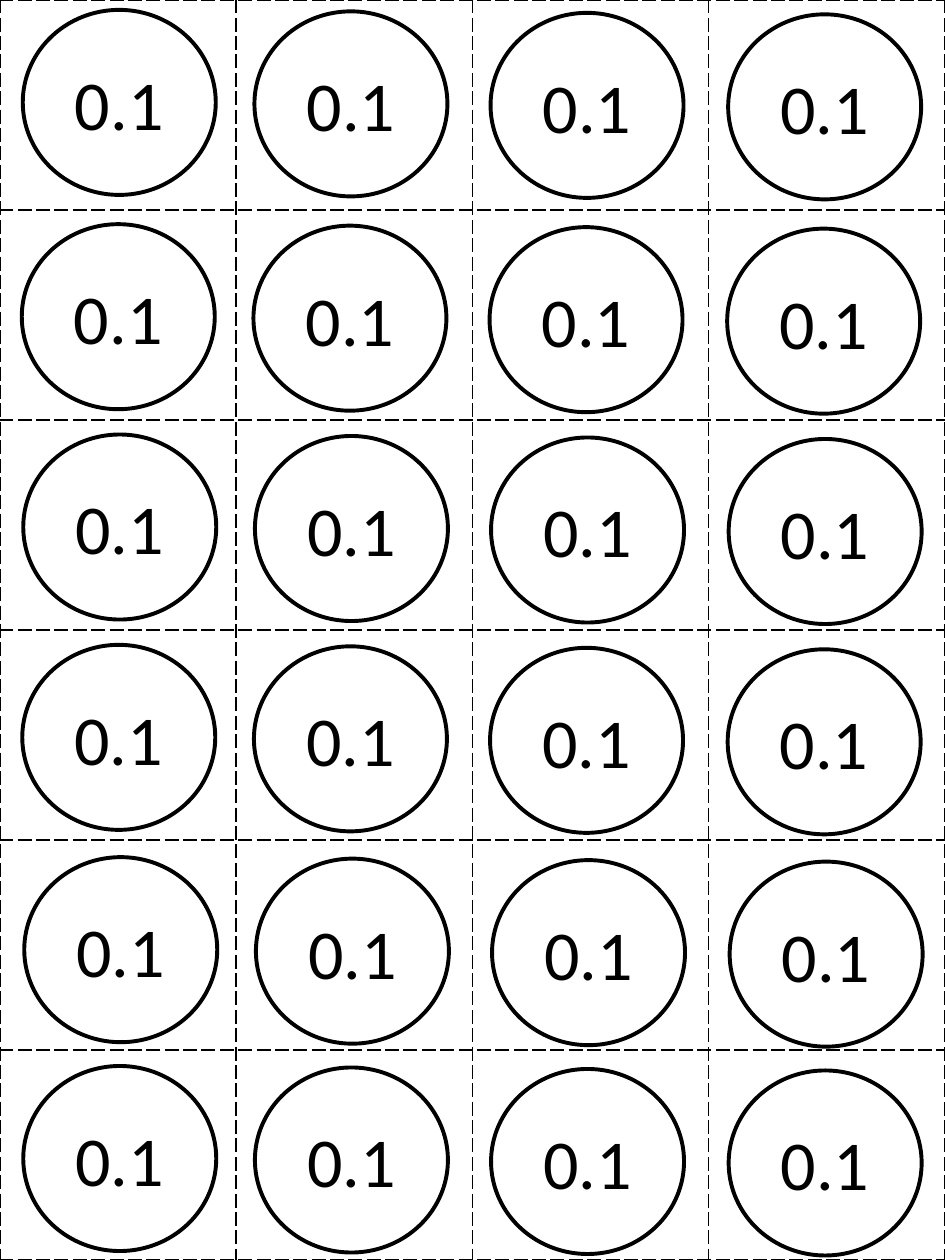
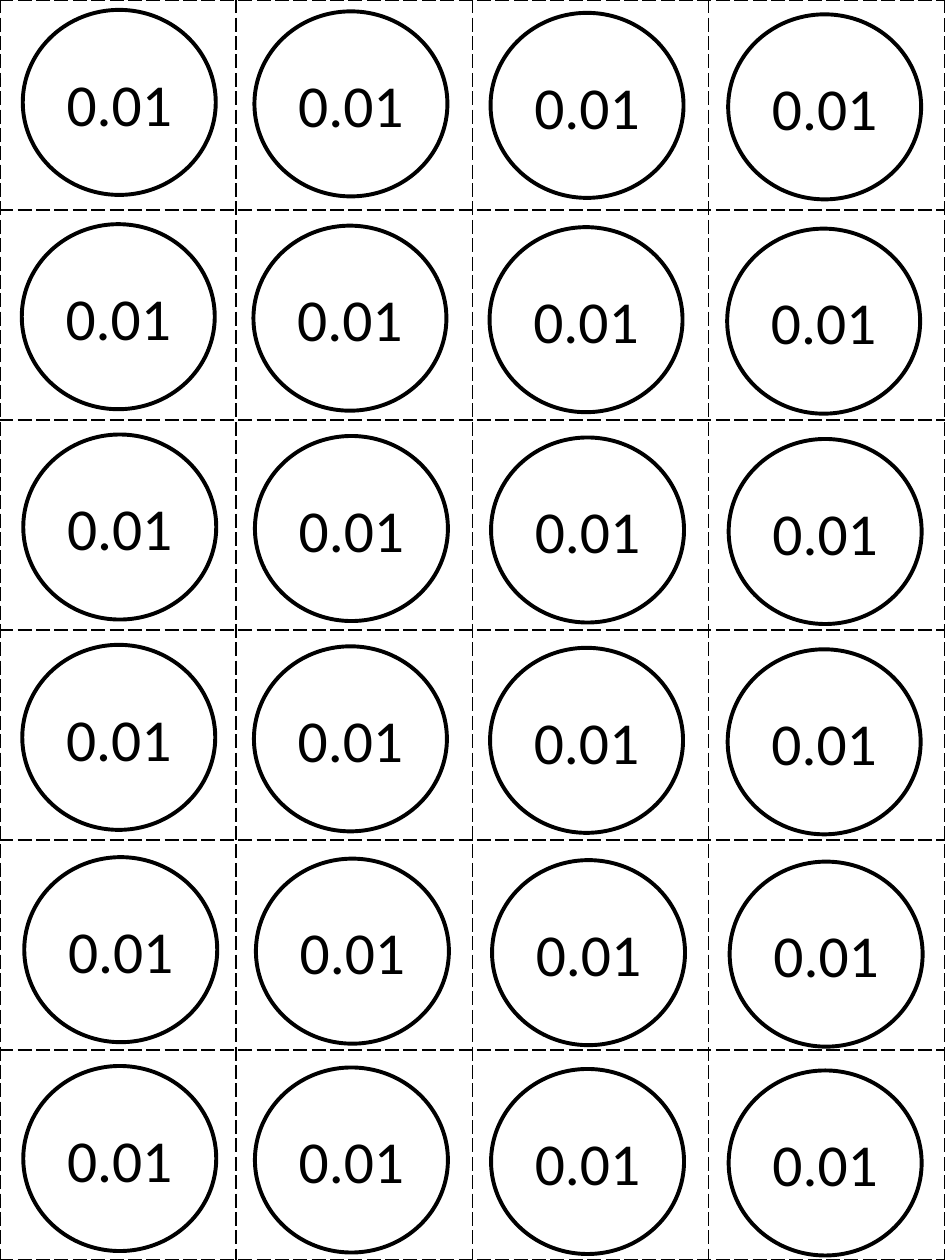
"""Build two sheets of decimal place value counters to cut out."""
import dataclasses
import itertools
import typing

import lxml.etree
import pptx
import pptx.dml.color
import pptx.enum.shapes
import pptx.enum.text
import pptx.oxml.ns
import pptx.util

Cm = pptx.util.Cm
Pt = pptx.util.Pt
BLACK = pptx.dml.color.RGBColor(0x00, 0x00, 0x00)
WHITE = pptx.dml.color.RGBColor(0xFF, 0xFF, 0xFF)

PAGE_WIDE, PAGE_HIGH = Cm(19.05), Cm(25.4)
DISC_WIDE, DISC_HIGH = Cm(3.89), Cm(3.73)
COL_LEFTS = (0.46, 5.13, 9.89, 14.68)
COL_DROP = 0.03
FRAME = {"word_wrap": True, "vertical_anchor": pptx.enum.text.MSO_ANCHOR.MIDDLE}
FONT = {"name": "Calibri"}
BORDER = {"w": str(Pt(1)), "cap": "flat", "cmpd": "sng", "algn": "ctr"}
SIDES = ("a:lnL", "a:lnR", "a:lnT", "a:lnB")


@dataclasses.dataclass(frozen=True)
class Row:
    top: float
    shift: float


@dataclasses.dataclass(frozen=True)
class Sheet:
    label: str
    size: int


ROWS = (Row(0.2, 0), Row(4.52, -0.02), Row(8.76, 0.01),
        Row(13, -0.01), Row(17.28, 0.03), Row(21.49, 0.01))
SHEETS = (Sheet("0.1", 40), Sheet("0.01", 34))


def set_all(target: typing.Any, values: dict[str, typing.Any]) -> None:
    for name, value in values.items():
        setattr(target, name, value)


def add_child(parent: typing.Any, tag: str, **values: str) -> typing.Any:
    return lxml.etree.SubElement(parent, pptx.oxml.ns.qn(tag), values)


def dash_cell(cell: typing.Any) -> None:
    props = cell._tc.get_or_add_tcPr()
    for side in SIDES:
        line = add_child(props, side, **BORDER)
        add_child(add_child(line, "a:solidFill"), "a:srgbClr", val=str(BLACK))
        add_child(line, "a:prstDash", val="lgDash")
    cell.fill.background()


def add_grid(slide: typing.Any) -> None:
    grid = slide.shapes.add_table(
        len(ROWS), len(COL_LEFTS), 0, 0, PAGE_WIDE, PAGE_HIGH).table
    set_all(grid, {"first_row": False, "horz_banding": False})
    for cell in grid.iter_cells():
        dash_cell(cell)


def add_disc(slide: typing.Any, left: float, top: float, sheet: Sheet) -> None:
    disc = slide.shapes.add_shape(
        pptx.enum.shapes.MSO_SHAPE.OVAL, Cm(left), Cm(top), DISC_WIDE, DISC_HIGH)
    disc.shadow.inherit = False
    disc.fill.solid()
    disc.fill.fore_color.rgb = WHITE
    disc.line.color.rgb = BLACK
    disc.line.width = Pt(2.25)
    set_all(disc.text_frame, FRAME)
    para = disc.text_frame.paragraphs[0]
    para.alignment = pptx.enum.text.PP_ALIGN.CENTER
    run = para.add_run()
    run.text = sheet.label
    set_all(run.font, FONT | {"size": Pt(sheet.size)})
    run.font.color.rgb = BLACK


def add_sheet(deck: typing.Any, sheet: Sheet) -> None:
    slide = deck.slides.add_slide(deck.slide_layouts[6])
    add_grid(slide)
    for row, (col, left) in itertools.product(ROWS, enumerate(COL_LEFTS)):
        add_disc(slide, left + row.shift, row.top + col * COL_DROP, sheet)


def main() -> None:
    deck = pptx.Presentation()
    set_all(deck, {"slide_width": PAGE_WIDE, "slide_height": PAGE_HIGH})
    for sheet in SHEETS:
        add_sheet(deck, sheet)
    deck.save("out.pptx")


if __name__ == "__main__":
    main()
